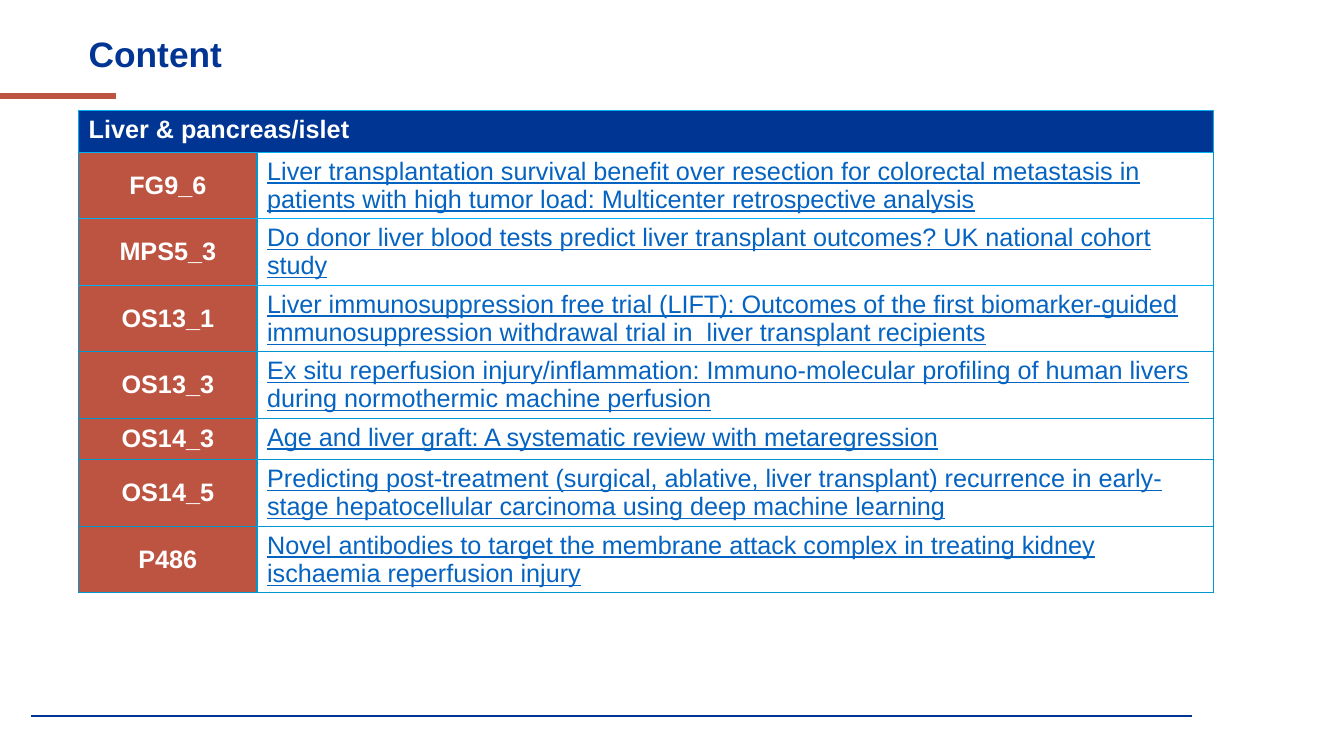
from lxml import etree
from pptx import Presentation
from pptx.dml.color import RGBColor
from pptx.enum.shapes import MSO_CONNECTOR
from pptx.enum.text import MSO_ANCHOR, PP_ALIGN
from pptx.oxml.ns import qn
from pptx.util import Inches, Pt

STRAIGHT = MSO_CONNECTOR.STRAIGHT
TOP, MIDDLE = MSO_ANCHOR.TOP, MSO_ANCHOR.MIDDLE
LEFT, CENTER = PP_ALIGN.LEFT, PP_ALIGN.CENTER

WIDTH, HEIGHT = 13.33, 7.5
MARGIN = 0.78
COLUMNS = (1.77, 9.49)
ROW_HEIGHT = 0.41
NAVY, RUST, WHITE, LINK = "003594", "BC5441", "FFFFFF", "0563C1"
BRIGHT_EDGE, EDGE = "00B0F0", "0097CE"
BRIGHT_ROWS = 4

HEADING = "Liver & pancreas/islet"
ABSTRACTS = [
    ("FG9_6", "Liver transplantation survival benefit over resection for colorectal metastasis in "
              "patients with high tumor load: Multicenter retrospective analysis"),
    ("MPS5_3", "Do donor liver blood tests predict liver transplant outcomes? UK national cohort study"),
    ("OS13_1", "Liver immunosuppression free trial (LIFT): Outcomes of the first biomarker-guided "
               "immunosuppression withdrawal trial in  liver transplant recipients"),
    ("OS13_3", "Ex situ reperfusion injury/inflammation: Immuno-molecular profiling of human livers "
               "during normothermic machine perfusion"),
    ("OS14_3", "Age and liver graft: A systematic review with metaregression"),
    ("OS14_5", "Predicting post-treatment (surgical, ablative, liver transplant) recurrence in "
               "early-stage hepatocellular carcinoma using deep machine learning"),
    ("P486", "Novel antibodies to target the membrane attack complex in treating kidney "
             "ischaemia reperfusion injury"),
]


def color(value):
    return RGBColor.from_string(value)


def style_font(font, size, value, bold=True, underline=False):
    font.name = "Arial"
    font.size = Pt(size)
    font.bold = bold
    font.underline = underline
    font.color.rgb = color(value)


def add_rule(page, start, end, y, value, weight):
    rule = page.shapes.add_connector(STRAIGHT, Inches(start), Inches(y), Inches(end), Inches(y))
    rule.line.color.rgb = color(value)
    rule.line.width = Pt(weight)
    etree.SubElement(rule._element.spPr, qn("a:effectLst"))


def set_title(page, text):
    title = page.shapes.title
    title.left, title.top = Inches(MARGIN), Inches(0.34)
    title.width, title.height = Inches(11.5), Inches(0.44)
    title.text_frame.text = text
    title.text_frame.vertical_anchor = MIDDLE
    para = title.text_frame.paragraphs[0]
    para.alignment = LEFT
    para.line_spacing = 0.9
    style_font(para.runs[0].font, 25.2, NAVY)


def set_borders(cell, row):
    """Bright edges above the first rows, plain ones elsewhere."""
    side = BRIGHT_EDGE if row == 0 else EDGE
    top = BRIGHT_EDGE if row < BRIGHT_ROWS else EDGE
    bottom = BRIGHT_EDGE if row + 1 < BRIGHT_ROWS else EDGE
    properties = cell._tc.get_or_add_tcPr()
    for tag, value in (("a:lnL", side), ("a:lnR", side), ("a:lnT", top), ("a:lnB", bottom)):
        line = etree.SubElement(properties, qn(tag), w=str(Pt(1)))
        fill = etree.SubElement(line, qn("a:solidFill"))
        etree.SubElement(fill, qn("a:srgbClr"), val=value)


def paint_cell(cell, row, fill):
    set_borders(cell, row)
    cell.fill.solid()
    cell.fill.fore_color.rgb = color(fill)


def write_cell(cell, text, value, alignment=LEFT, anchor=TOP, bold=True, underline=False):
    cell.text_frame.text = text
    cell.vertical_anchor = anchor
    para = cell.text_frame.paragraphs[0]
    para.alignment = alignment
    style_font(para.runs[0].font, 18, value, bold, underline)


def add_abstract_table(page):
    count = len(ABSTRACTS) + 1
    table = page.shapes.add_table(count, len(COLUMNS), Inches(MARGIN), Inches(1.1),
                                  Inches(sum(COLUMNS)), Inches(count * ROW_HEIGHT)).table
    table.first_row = table.horz_banding = False
    for column, width in zip(table.columns, COLUMNS):
        column.width = Inches(width)
    for row in table.rows:
        row.height = Inches(ROW_HEIGHT)

    heading = table.cell(0, 0)
    heading.merge(table.cell(0, 1))
    for cell in table.rows[0].cells:
        paint_cell(cell, 0, NAVY)
    write_cell(heading, HEADING, WHITE)

    for row, (code, topic) in enumerate(ABSTRACTS, start=1):
        code_cell, topic_cell = table.rows[row].cells
        paint_cell(code_cell, row, RUST)
        write_cell(code_cell, code, WHITE, CENTER, MIDDLE)
        paint_cell(topic_cell, row, WHITE)
        write_cell(topic_cell, topic, LINK, bold=False, underline=True)


def main():
    deck = Presentation()
    deck.slide_width, deck.slide_height = Inches(WIDTH), Inches(HEIGHT)
    page = deck.slides.add_slide(deck.slide_layouts[5])
    add_rule(page, 0, 1.15, 0.95, RUST, 4.5)
    add_rule(page, 0.31, 11.82, 7.1, NAVY, 1.5)
    set_title(page, "Content")
    add_abstract_table(page)
    deck.save("out.pptx")


if __name__ == "__main__":
    main()
